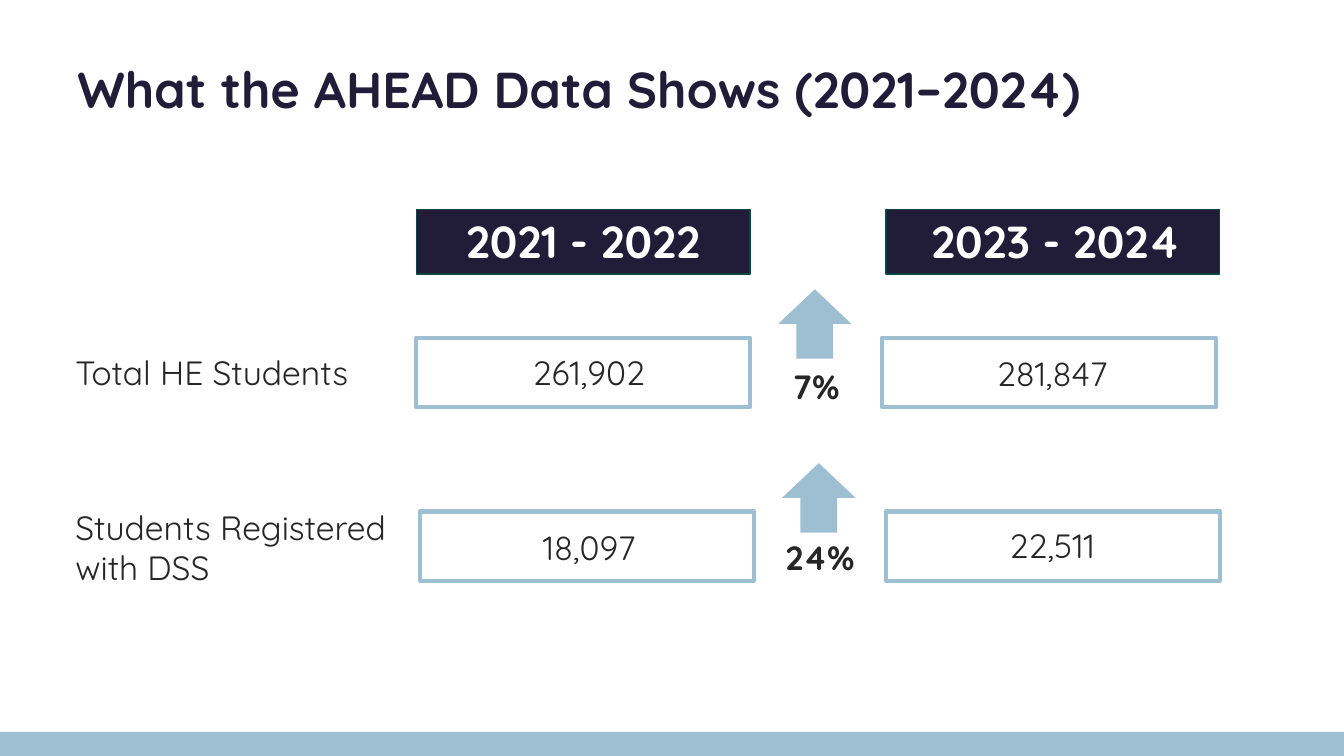
from pptx import Presentation
from pptx.dml.color import RGBColor
from pptx.enum.shapes import MSO_SHAPE
from pptx.enum.text import PP_ALIGN
from pptx.util import Cm, Pt

NAVY = RGBColor(0x21, 0x1D, 0x39)
GREEN = RGBColor(0x0A, 0x44, 0x43)
BLUE = RGBColor(0x9D, 0xBF, 0xD1)
GREY = RGBColor(0x26, 0x26, 0x26)
WHITE = RGBColor(0xFF, 0xFF, 0xFF)

SLIDE_W, SLIDE_H = 33.87, 19.05
BOX_W, BOX_H = 8.41, 1.75
HEADER_H = 1.63
LINE_H = 1.27
ROW_DX, ROW_DY = 0.1, 4.38


class SlideBuilder:
    def __init__(self, prs, font):
        self.s = prs.slides.add_slide(prs.slide_layouts[6])
        self.font = font

    def shape(self, kind, x, y, w, h, fill=None, line=None, weight=1):
        sp = self.s.shapes.add_shape(kind, Cm(x), Cm(y), Cm(w), Cm(h))
        sp.shadow.inherit = False
        if fill is None:
            sp.fill.background()
        else:
            sp.fill.solid()
            sp.fill.fore_color.rgb = fill
        if line is None:
            sp.line.fill.background()
        else:
            sp.line.color.rgb = line
            sp.line.width = Pt(weight)

    def text(self, lines, x, y, w, h=LINE_H, color=GREY, size=24, bold=False, **layout):
        """Add a text box; layout holds paragraph settings such as level."""
        tf = self.s.shapes.add_textbox(Cm(x), Cm(y), Cm(w), Cm(h)).text_frame
        tf.word_wrap = True
        for i, line in enumerate(lines):
            p = tf.paragraphs[0] if i == 0 else tf.add_paragraph()
            for name, value in layout.items():
                setattr(p, name, value)
            r = p.add_run()
            r.text = line
            style = {"name": self.font, "size": Pt(size), "bold": bold}
            for name, value in style.items():
                setattr(r.font, name, value)
            r.font.color.rgb = color

    def header(self, label, box_x, text_x):
        self.shape(MSO_SHAPE.RECTANGLE, box_x, 5.28, BOX_W, HEADER_H, NAVY, GREEN)
        self.text([label], text_x, 5.26, BOX_W, HEADER_H, WHITE, 32, True,
                  alignment=PP_ALIGN.CENTER)

    def row_shapes(self, row):
        """Draw the two value boxes and the arrow between them."""
        dx, dy = row * ROW_DX, row * ROW_DY
        for x in (10.49, 22.23):
            self.shape(MSO_SHAPE.RECTANGLE, x + dx, 8.51 + dy, BOX_W, BOX_H,
                       line=BLUE, weight=3)
        self.shape(MSO_SHAPE.UP_ARROW, 19.61 + dx, 7.29 + dy, 1.85, BOX_H, BLUE)


def main():
    prs = Presentation()
    prs.slide_width, prs.slide_height = Cm(SLIDE_W), Cm(SLIDE_H)
    slide = SlideBuilder(prs, "Quicksand")

    slide.text(["What the AHEAD Data Shows (2021–2024)"], 1.7, 1.52, 29.59, 2.29,
               NAVY, 36, True, line_spacing=0.9)
    slide.shape(MSO_SHAPE.RECTANGLE, 0, 18.44, SLIDE_W, 0.61, BLUE)
    slide.header("2021 - 2022", 10.49, 10.49)
    slide.header("2023 - 2024", 22.33, 22.4)

    slide.text(["Total HE Students"], 0.38, 8.74, 9.17, level=1)
    slide.text(["Students Registered", "with DSS"], 0.38, 12.65, 9.96, 2.31, level=1)

    slide.text(["281,847"], 23.6, 8.76, 6.02, level=1)
    for value, x, y, w in (("261,902", 10.85, 8.74, 6.71),
                           ("18,097", 11.94, 13.16, 4.55),
                           ("22,511", 23.57, 13.11, 4.62)):
        slide.text([value], x, y, w, level=1, alignment=PP_ALIGN.CENTER)
    for growth, x, y, w in (("7%", 18.26, 9.09, 3.35), ("24%", 18.14, 13.41, 3.78)):
        slide.text([growth], x, y, w, bold=True, level=1, alignment=PP_ALIGN.CENTER)

    for row in range(2):
        slide.row_shapes(row)
    prs.save("out.pptx")


if __name__ == "__main__":
    main()
